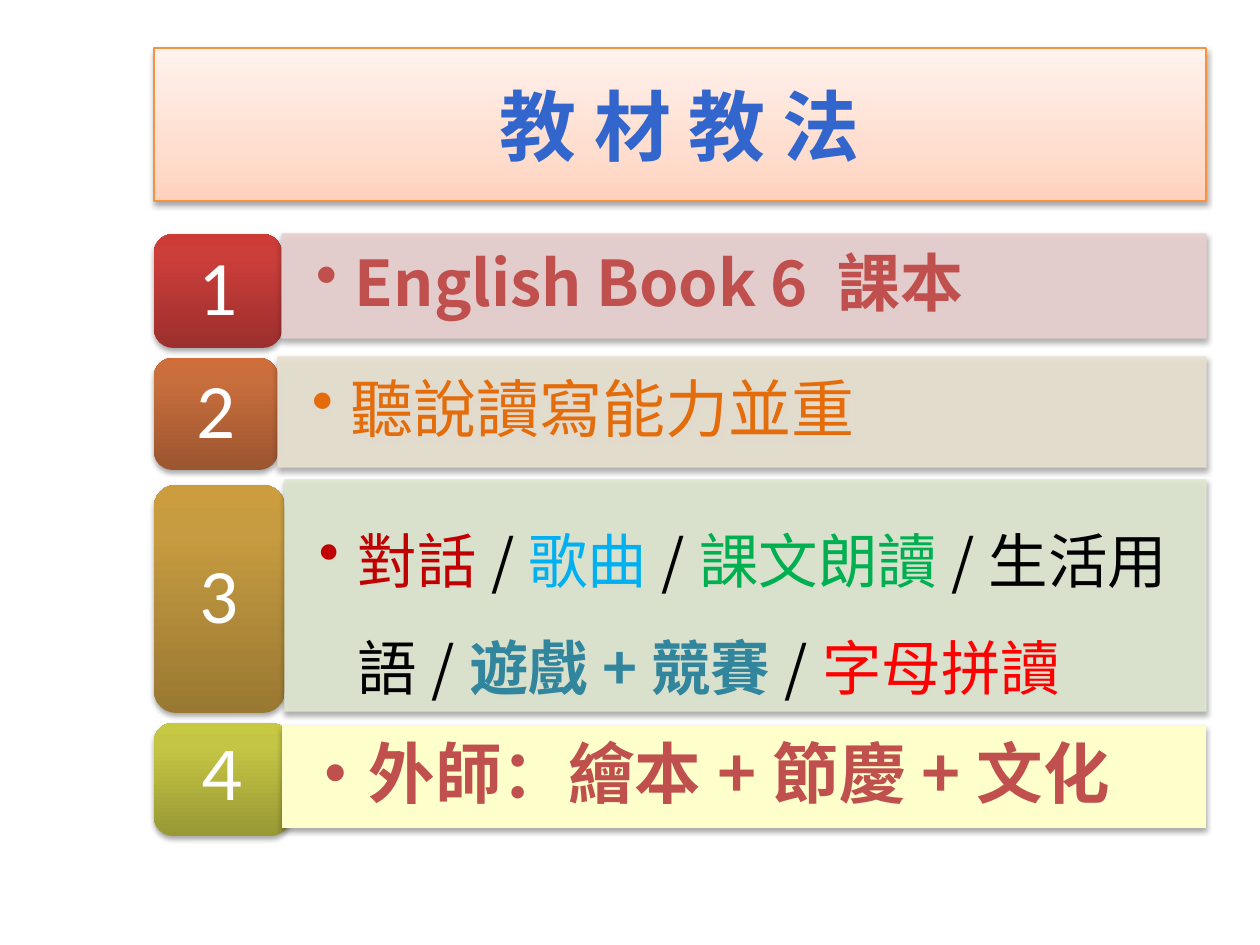
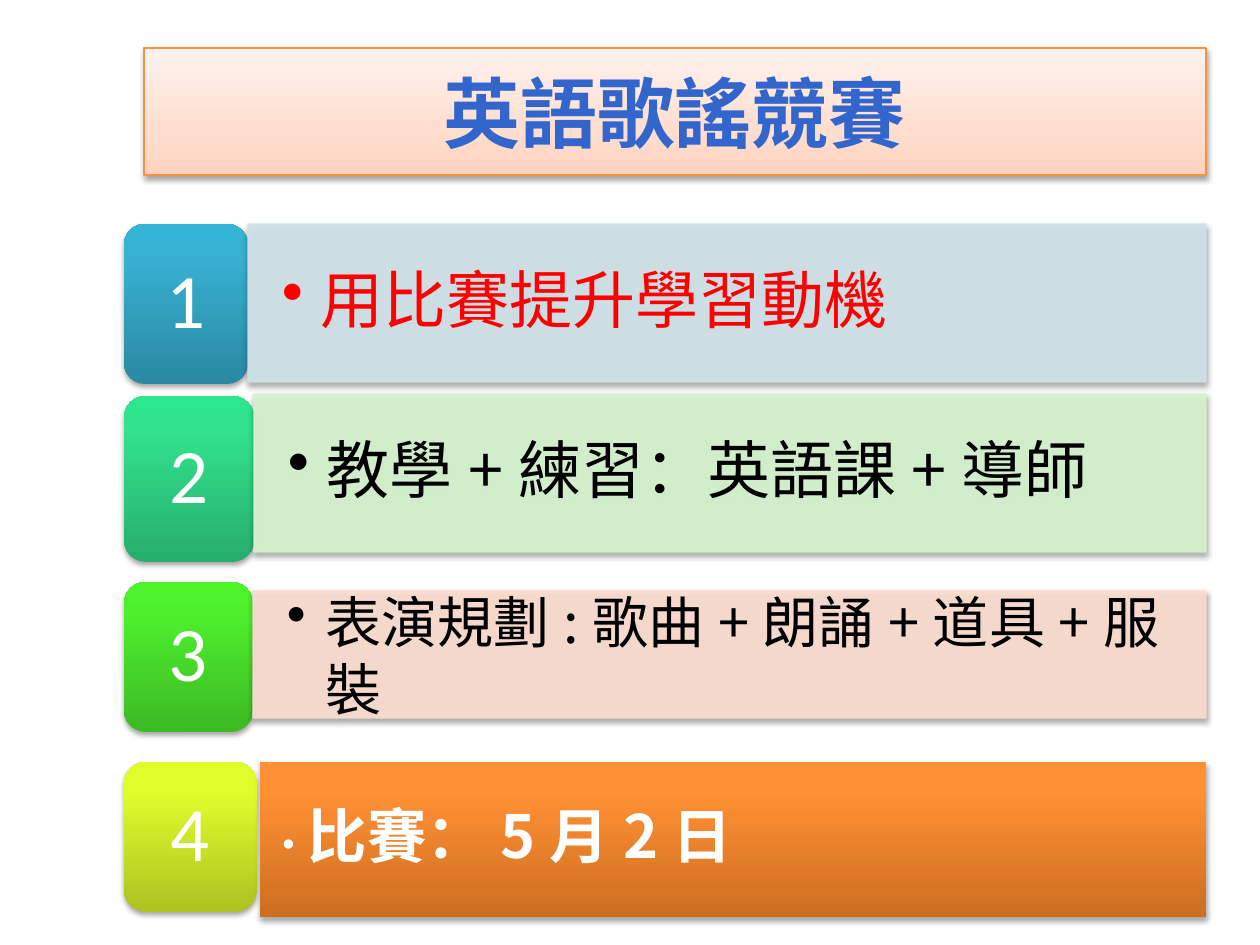
import copy

import pptx
import pptx.dml.color
import pptx.enum.shapes
import pptx.enum.text
import pptx.oxml
import pptx.oxml.ns
import pptx.util

PX = 914400 / 126
RIGHT = 1206
SHAPES = pptx.enum.shapes.MSO_SHAPE
ALIGN = pptx.enum.text.PP_ALIGN
qn = pptx.oxml.ns.qn
SHADOW = (
    '<a:outerShdw xmlns:a="http://schemas.openxmlformats.org/drawingml/2006/main" '
    'blurRad="40000" dist="23000" dir="5400000" rotWithShape="0">'
    '<a:srgbClr val="000000"><a:alpha val="35000"/></a:srgbClr></a:outerShdw>'
)


class Theme:
    body_font = "Noto Sans CJK SC"
    number_font = "Calibri"
    title_size = number_size = 44
    large, body, medium, small, dot = 38, 36, 34, 32, 21
    title = "3366CC"
    title_fill = ("FFD2BD", "FFDED0", "FFF2ED")
    title_line = "F69240"
    white, black, red, brick = "FFFFFF", "000000", "FF0000", "C0504D"
    crimson, orange, sky, green, teal = "C00000", "E46C0A", "00B0F0", "00B050", "31859C"


def add_panel(page, kind, box, fill, line=None, stops=(0, 0.8, 1), opacity=None):
    """Add a shadowed shape; a tuple of colours fills it from bottom to top."""
    shape = page.shapes.add_shape(kind, *[round(length * PX) for length in box])
    if isinstance(fill, tuple):
        shape.fill.gradient()
        shape.fill.gradient_angle = 90
        stop_list = shape._element.spPr.find(".//" + qn("a:gsLst"))
        stop_list.append(copy.deepcopy(stop_list[0]))
        for stop, position, colour in zip(shape.fill.gradient_stops, stops, fill):
            stop.position = position
            stop.color.rgb = pptx.dml.color.RGBColor.from_string(colour)
    else:
        shape.fill.solid()
        shape.fill.fore_color.rgb = pptx.dml.color.RGBColor.from_string(fill)
    if line:
        shape.line.color.rgb = pptx.dml.color.RGBColor.from_string(line)
        shape.line.width = pptx.util.Pt(0.75)
    else:
        shape.line.fill.background()
    if opacity:
        for colour in shape._element.spPr.iter(qn("a:srgbClr")):
            colour.append(colour.makeelement(qn("a:alpha"), {"val": str(opacity * 1000)}))
    shape.shadow.inherit = False
    effects = shape._element.spPr.find(qn("a:effectLst"))
    effects.append(pptx.oxml.parse_xml(SHADOW))
    return shape


def write(shape, runs, insets, font=Theme.body_font, bullet=False, **para_format):
    """Fill a shape with one paragraph of (text, size, colour, bold) runs."""
    frame = shape.text_frame
    across, down = [round(inset * PX) for inset in insets]
    frame_format = {
        "word_wrap": True,
        "vertical_anchor": pptx.enum.text.MSO_ANCHOR.MIDDLE,
        "margin_left": across, "margin_right": across,
        "margin_top": down, "margin_bottom": down,
    }
    for name, value in frame_format.items():
        setattr(frame, name, value)
    para = frame.paragraphs[0]
    if bullet:
        indent = round(39 * PX)
        properties = para._p.get_or_add_pPr()
        properties.set("marL", str(indent))
        properties.set("indent", str(-indent))
        properties.append(properties.makeelement(qn("a:buChar"), {"char": "•"}))
        para.level = 1
    for name, value in para_format.items():
        setattr(para, name, value)
    for text, size, colour, bold in runs:
        span = para.add_run()
        span.text = text
        span_format = {"name": font, "size": pptx.util.Pt(size), "bold": bold}
        for name, value in span_format.items():
            setattr(span.font, name, value)
        span.font.color.rgb = pptx.dml.color.RGBColor.from_string(colour)
        properties = span._r.get_or_add_rPr()
        east_asian = properties.makeelement(qn("a:ea"), {"typeface": font})
        properties.find(qn("a:latin")).addnext(east_asian)


T = Theme
BULLETED = {"bullet": True, "insets": (34, 17), "line_spacing": 0.9, "alignment": ALIGN.LEFT}
PLAIN = {"insets": (20, 10), "line_spacing": 0.9, "alignment": ALIGN.LEFT}

# Each row: number, number size, tab (top, width, height), tab colours,
# band (left, top, height), band fill, text format, runs
pages = [
    {
        "title": "教 材 教 法", "title_left": 154, "title_height": 153, "tab_left": 154,
        "rows": [
            ("1", T.number_size, (234, 128, 114), ("9C2F2D", "CB3E3A", "CE3B37"),
             (282, 234, 104), "E8D0D0", BULLETED,
             [("English Book 6 課本", T.body, T.brick, True)]),
            ("2", T.number_size, (358, 124, 112), ("9B552F", "C96E3D", "CD6E3B"),
             (278, 357, 110), "E8E1D1", BULLETED,
             [("聽說讀寫能力並重", T.body, T.orange, False)]),
            ("3", T.number_size, (485, 131, 228), ("997832", "C79C41", "CB9D3F"),
             (285, 480, 231), "DEE7D1",
             {**BULLETED, "line_spacing": 1.5, "space_after": pptx.util.Pt(12)},
             [("對話", T.medium, T.crimson, False),
              ("/", T.medium, T.black, False),
              ("歌曲", T.medium, T.sky, False),
              ("/", T.medium, T.black, False),
              ("課文朗讀", T.medium, T.green, False),
              ("/生活用語/", T.medium, T.black, False),
              ("遊戲+競賽", T.medium, T.teal, True),
              ("/", T.medium, T.black, False),
              ("字母拼讀", T.medium, T.red, False)]),
            ("４", T.large, (723, 136, 113), ("989835", "C5C545", "C8C942"),
             (282, 726, 102), "FFFFCC", PLAIN,
             [("・外師：繪本+節慶+文化", T.large, T.brick, True)]),
        ],
    },
    {
        "title": "英語歌謠競賽", "title_left": 144, "title_height": 127, "tab_left": 124,
        "rows": [
            ("1", T.number_size, (224, 124, 160), ("2A88A2", "37B1D2", "34B4D6"),
             (248, 224, 158), "D0E3EA", BULLETED,
             [("用比賽提升學習動機", T.body, T.red, False)]),
            ("2", T.number_size, (396, 130, 166), ("26AE6D", "32E28D", "2EE68E"),
             (254, 394, 158), "D6F4CE", BULLETED,
             [("教學+練習：英語課+導師", T.body, T.black, False)]),
            ("3", T.number_size, (582, 129, 150), ("3CB923", "4EF02E", "4CF52A"),
             (253, 591, 127), "FCDDCF", {**BULLETED, "line_spacing": 1.0},
             [("表演規劃:歌曲+朗誦+道具+服裝", T.small, T.black, False)]),
            ("4", T.number_size, (762, 133, 150), ("ACC321", "DFFD2B", "E1FF2B"),
             (260, 762, 155), ("CC6E20", "FF9034", "FF9136"), {**PLAIN, "insets": (11, 5)},
             [("・", T.dot, T.white, True), ("比賽：5月2日", T.medium, T.white, True)]),
        ],
    },
]

deck = pptx.Presentation()
deck.slide_width = round(1260 * PX)
deck.slide_height = round(945 * PX)

for content in pages:
    page = deck.slides.add_slide(deck.slide_layouts[6])
    for number, size, tab_box, tab_fill, band_box, band_fill, text_format, runs in content["rows"]:
        top, width, height = tab_box
        tab = add_panel(page, SHAPES.ROUNDED_RECTANGLE,
                        (content["tab_left"], top, width, height), tab_fill)
        write(tab, [(number, size, T.white, False)], (23, 11), T.number_font,
              alignment=ALIGN.CENTER, line_spacing=0.9)

        left, top, height = band_box
        tinted = text_format.get("bullet")
        band = add_panel(page, SHAPES.RECTANGLE, (left, top, RIGHT - left, height), band_fill,
                         line=band_fill if tinted else None, opacity=90 if tinted else None)
        write(band, runs, **text_format)

    left = content["title_left"]
    title = add_panel(page, SHAPES.RECTANGLE, (left, 48, RIGHT - left, content["title_height"]),
                      T.title_fill, T.title_line, stops=(0, 0.35, 1))
    write(title, [(content["title"], T.title_size, T.title, True)], (13, 6),
          alignment=ALIGN.CENTER)

deck.save("out.pptx")
